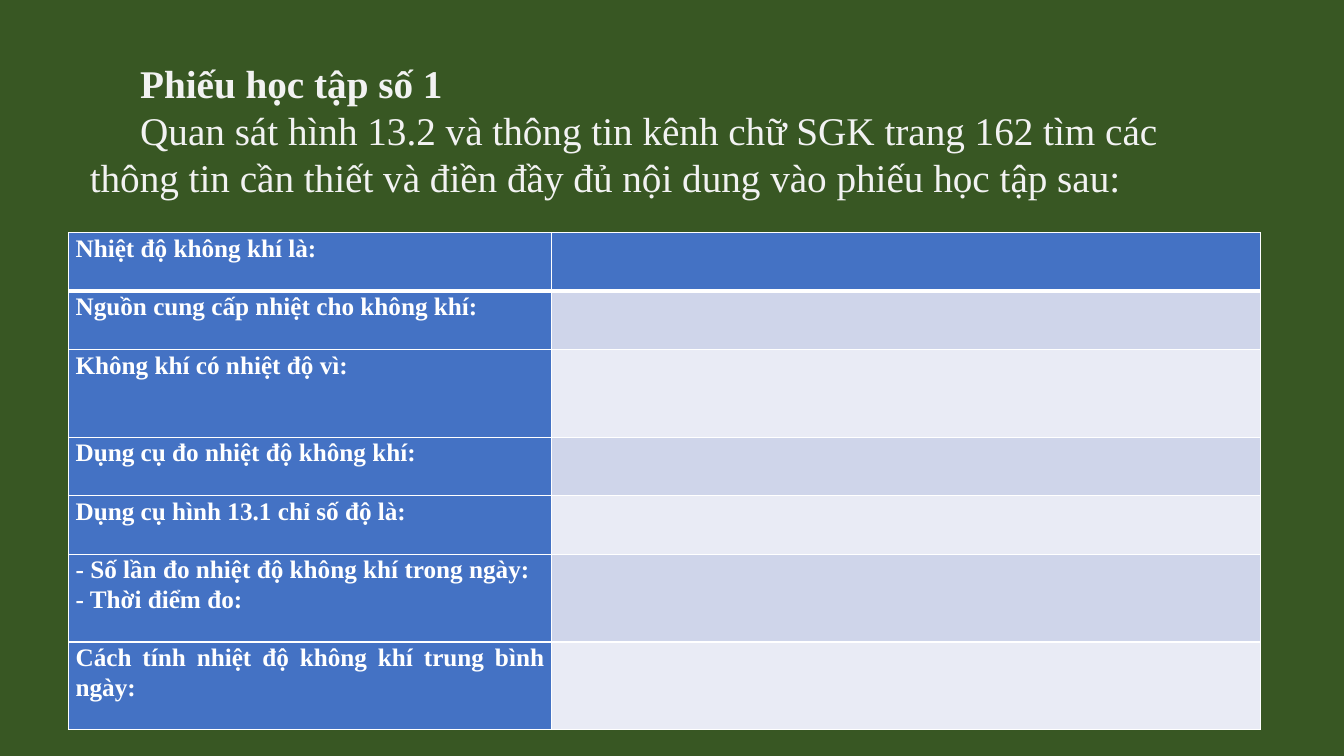
import pptx
import pptx.util
import pptx.dml.color
import pptx.enum.text
import pptx.oxml
import pptx.oxml.ns
from lxml import etree

Inches = pptx.util.Inches
Pt = pptx.util.Pt
RGBColor = pptx.dml.color.RGBColor
PP_ALIGN = pptx.enum.text.PP_ALIGN

GREEN = RGBColor(0x38, 0x57, 0x23)
BLUE = RGBColor(0x44, 0x72, 0xC4)
BAND_DARK = RGBColor(0xCF, 0xD5, 0xEA)
BAND_LIGHT = RGBColor(0xE9, 0xEB, 0xF5)
WHITE = RGBColor(0xFF, 0xFF, 0xFF)
OFF_WHITE = RGBColor(0xF2, 0xF2, 0xF2)

HEADING = "Phiếu học tập số 1"
TASK = ("Quan sát hình 13.2 và thông tin kênh chữ SGK trang 162 tìm các "
        "thông tin cần thiết và điền đầy đủ nội dung vào phiếu học tập sau:")
SHORT, TALL = 0.58, 0.87
QUESTIONS = [
    (SHORT, ["Nhiệt độ không khí là:"]),
    (SHORT, ["Nguồn cung cấp nhiệt cho không khí:"]),
    (TALL, ["Không khí có nhiệt độ vì:"]),
    (SHORT, ["Dụng cụ đo nhiệt độ không khí:"]),
    (SHORT, ["Dụng cụ hình 13.1 chỉ số độ là:"]),
    (TALL, ["- Số lần đo nhiệt độ không khí trong ngày:", "- Thời điểm đo:"]),
    (TALL, ["Cách tính nhiệt độ không khí trung bình ngày:"]),
]


def add_text(tf, text, first=False, size=18, color=WHITE, bold=True,
             align=PP_ALIGN.LEFT, spacing=1.0, indent=0):
    p = tf.paragraphs[0] if first else tf.add_paragraph()
    p.alignment = align
    p.line_spacing = spacing
    if indent:
        pPr = p._p.get_or_add_pPr()
        pPr.set("marL", "0")
        pPr.set("indent", str(Inches(indent)))
    r = p.add_run()
    r.text = text
    r.font.name = "Times New Roman"
    r.font.size = Pt(size)
    r.font.bold = bold
    r.font.color.rgb = color


class Worksheet:
    def __init__(self, prs):
        self.s = prs.slides.add_slide(prs.slide_layouts[5])
        fill = self.s.background.fill
        fill.solid()
        fill.fore_color.rgb = GREEN

    def title(self, left, top, width, height):
        sp = self.s.shapes.title
        sp.left, sp.top = Inches(left), Inches(top)
        sp.width, sp.height = Inches(width), Inches(height)
        tf = sp.text_frame
        tf.word_wrap = True
        tf.auto_size = pptx.enum.text.MSO_AUTO_SIZE.SHAPE_TO_FIT_TEXT
        tf.vertical_anchor = pptx.enum.text.MSO_ANCHOR.TOP
        style = dict(size=28, color=OFF_WHITE, indent=0.5)
        add_text(tf, HEADING, first=True, **style)
        add_text(tf, TASK, bold=False, **style)

    def borders(self, cell, top, bottom):
        tcPr = cell._tc.get_or_add_tcPr()
        for side, width in (("L", 1), ("R", 1), ("T", top), ("B", bottom)):
            ln = etree.SubElement(tcPr, pptx.oxml.ns.qn("a:ln" + side), w=str(Pt(width)))
            solid = etree.SubElement(ln, pptx.oxml.ns.qn("a:solidFill"))
            etree.SubElement(solid, pptx.oxml.ns.qn("a:srgbClr"), val=str(WHITE))

    def table(self, left, top, widths, questions):
        height = sum(h for h, _ in questions)
        frame = self.s.shapes.add_table(len(questions), len(widths), Inches(left), Inches(top),
                                        Inches(sum(widths)), Inches(height))
        tbl = frame.table
        for column, width in zip(tbl.columns, widths):
            column.width = Inches(width)
        for i, (height, lines) in enumerate(questions):
            tbl.rows[i].height = Inches(height)
            band = BLUE if i == 0 else BAND_DARK if i % 2 else BAND_LIGHT
            for j, color in enumerate((BLUE, band)):
                cell = tbl.cell(i, j)
                self.borders(cell, top=3 if i == 1 else 1, bottom=3 if i == 0 else 1)
                cell.fill.solid()
                cell.fill.fore_color.rgb = color
            label = tbl.cell(i, 0)
            label.margin_left = label.margin_right = Inches(0.07)
            label.margin_top = label.margin_bottom = 0
            for n, line in enumerate(lines):
                add_text(label.text_frame, line, first=n == 0,
                         align=PP_ALIGN.JUSTIFY, spacing=1.07)


def main():
    prs = pptx.Presentation()
    prs.slide_width, prs.slide_height = Inches(13.33), Inches(7.5)
    sheet = Worksheet(prs)
    sheet.table(0.68, 2.31, (4.79, 7.03), QUESTIONS)
    sheet.title(0.79, 0.54, 11.34, 1.51)
    prs.save("out.pptx")


if __name__ == "__main__":
    main()
